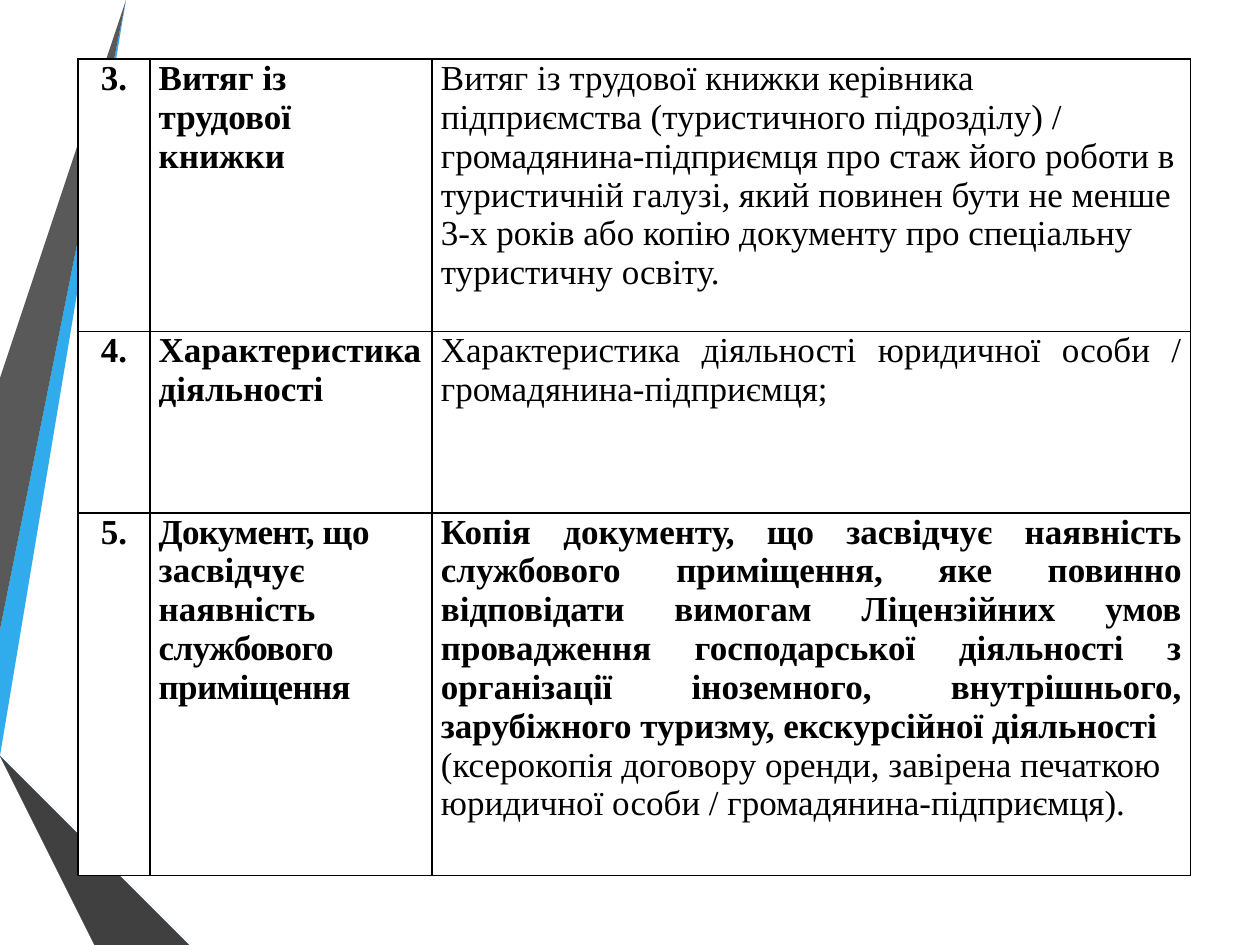
import pptx
import pptx.util
import pptx.dml.color
import pptx.enum.text
import pptx.oxml.ns
import lxml.etree

Inches = pptx.util.Inches
Pt = pptx.util.Pt
ALIGN = pptx.enum.text.PP_ALIGN

COLOURS = {"sky": "30ACEC", "grey": "595959", "black": "262626", "navy": "0C5A82",
           "blue": "1287C3", "dark": "404040", "paper": "FFFFFF", "ink": "000000"}
FONT = "Times New Roman"
WIDTH, HEIGHT = 10, 7.5

# Ribbons on the left edge: colour and outline points in inches
RIBBONS = [
    ("sky", [(0, 5.44), (0, 5.75), (0.22, 5.79), (1.17, 0), (0.89, 0)]),
    ("grey", [(0.83, 0), (0.55, 0), (0, 3.36), (0, 5.06)]),
    ("black", [(0, 6.19), (0, 6.21), (0.93, HEIGHT), (0.99, HEIGHT)]),
    ("navy", [(0, 5.79), (0, 5.8), (1.56, HEIGHT), (1.63, HEIGHT)]),
    ("blue", [(0, 5.79), (1.63, HEIGHT), (2.33, HEIGHT), (0.22, 5.79), (0, 5.75)]),
    ("dark", [(0, 6.19), (0.99, HEIGHT), (1.51, HEIGHT), (0, 5.86)]),
]

# Each row: number, document name as (text, letter spacing) spans,
# description as (text, bold, alignment) paragraphs
ROWS = [
    ("3.", [("Витяг із трудової книжки", 0)],
     [("Витяг із трудової книжки керівника підприємства (туристичного підрозділу) / "
       "громадянина-підприємця про стаж його роботи в туристичній галузі, який повинен "
       "бути не менше 3-х років або копію документу про спеціальну туристичну освіту.",
       False, ALIGN.LEFT)]),
    ("4.", [("Характеристика діяльності", 0)],
     [("Характеристика діяльності юридичної особи / громадянина-підприємця;",
       False, ALIGN.JUSTIFY)]),
    ("5.", [("Документ, ", -0.4), ("що засвідчує наявність ", 0),
            ("службового ", -0.3), ("приміщення", -0.4)],
     [("Копія документу, що засвідчує наявність службового приміщення, яке повинно "
       "відповідати вимогам Ліцензійних умов провадження господарської діяльності з "
       "організації іноземного, внутрішнього, зарубіжного туризму, екскурсійної діяльності",
       True, ALIGN.JUSTIFY),
      ("(ксерокопія договору оренди, завірена печаткою юридичної особи / "
       "громадянина-підприємця).", False, ALIGN.LEFT)]),
]
TABLE_LEFT, TABLE_TOP = 0.62, 0.47
COLUMN_WIDTHS = [0.57, 2.24, 6.02]
ROW_HEIGHTS = [2.16, 1.44, 2.88]


def paint(fill, name):
    fill.solid()
    fill.fore_color.rgb = pptx.dml.color.RGBColor.from_string(COLOURS[name])


def add_span(para, text, bold=True, spacing=0, size=20, colour="ink"):
    span = para.add_run()
    span.text = text
    span.font.name, span.font.size, span.font.bold = FONT, Pt(size), bold
    paint(span.font.fill, colour)
    if spacing:
        span.font._element.set("spc", str(round(spacing * 100)))


def add_ribbon(page, colour, points):
    builder = page.shapes.build_freeform(*points[0], scale=Inches(1))
    builder.add_line_segments(points[1:], close=True)
    ribbon = builder.convert_to_shape()
    paint(ribbon.fill, colour)
    ribbon.line.fill.background()
    ribbon.shadow.inherit = False


def format_cell(cell):
    cell.margin_left = cell.margin_right = Inches(0.07)
    cell.margin_top = cell.margin_bottom = 0
    # Borders come before the fill in the cell properties
    properties = cell._tc.get_or_add_tcPr()
    qn = pptx.oxml.ns.qn
    for side in ("lnL", "lnR", "lnT", "lnB"):
        line = lxml.etree.SubElement(properties, qn("a:" + side), w=str(Pt(1)))
        solid = lxml.etree.SubElement(line, qn("a:solidFill"))
        lxml.etree.SubElement(solid, qn("a:srgbClr"), val=COLOURS["ink"])
    paint(cell.fill, "paper")


def fill_row(cells, number, name, description):
    number_cell, name_cell, description_cell = cells
    para = number_cell.text_frame.paragraphs[0]
    para.alignment = ALIGN.CENTER
    add_span(para, number)

    para = name_cell.text_frame.paragraphs[0]
    for text, spacing in name:
        add_span(para, text, spacing=spacing)

    frame = description_cell.text_frame
    for index, (text, bold, alignment) in enumerate(description):
        para = frame.add_paragraph() if index else frame.paragraphs[0]
        para.alignment = alignment
        add_span(para, text, bold=bold)


def main():
    deck = pptx.Presentation()
    deck.slide_width, deck.slide_height = Inches(WIDTH), Inches(HEIGHT)
    page = deck.slides.add_slide(deck.slide_layouts[6])
    paint(page.background.fill, "paper")

    for colour, points in RIBBONS:
        add_ribbon(page, colour, points)

    # Table of documents
    table = page.shapes.add_table(
        len(ROWS), len(COLUMN_WIDTHS), Inches(TABLE_LEFT), Inches(TABLE_TOP),
        Inches(sum(COLUMN_WIDTHS)), Inches(sum(ROW_HEIGHTS))).table
    table.first_row = table.horz_banding = False
    for column, width in zip(table.columns, COLUMN_WIDTHS):
        column.width = Inches(width)
    for row, height, content in zip(table.rows, ROW_HEIGHTS, ROWS):
        row.height = Inches(height)
        for cell in row.cells:
            format_cell(cell)
        fill_row(row.cells, *content)

    deck.save("out.pptx")


if __name__ == "__main__":
    main()
